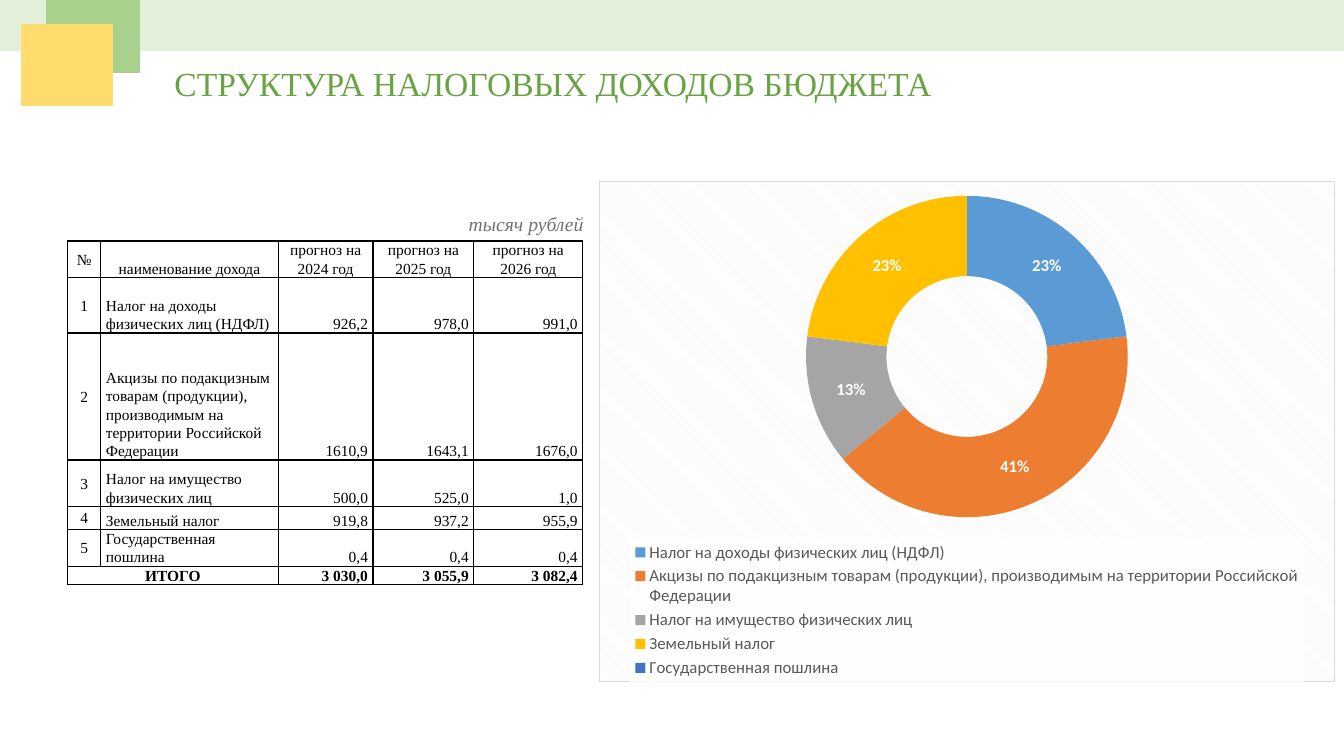
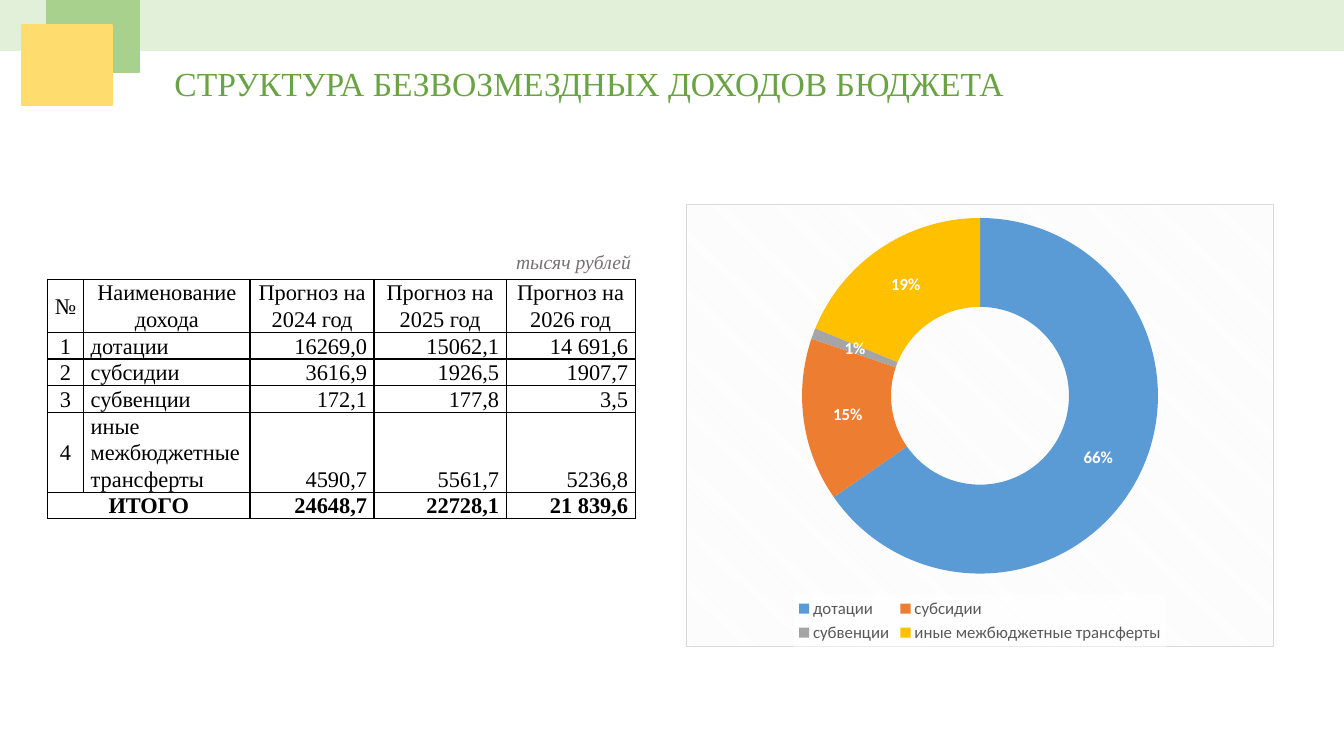
from pptx import Presentation
from pptx.chart.data import CategoryChartData
from pptx.dml.color import RGBColor
from pptx.enum.chart import XL_CHART_TYPE, XL_LEGEND_POSITION
from pptx.enum.shapes import MSO_SHAPE
from pptx.enum.text import MSO_ANCHOR, PP_ALIGN
from pptx.oxml import parse_xml
from pptx.oxml.ns import nsdecls, qn
from pptx.util import Inches, Pt

DOUGHNUT = XL_CHART_TYPE.DOUGHNUT
LEGEND_BOTTOM = XL_LEGEND_POSITION.BOTTOM
RECT = MSO_SHAPE.RECTANGLE
TOP, MIDDLE, BOTTOM = MSO_ANCHOR.TOP, MSO_ANCHOR.MIDDLE, MSO_ANCHOR.BOTTOM
LEFT, CENTER, RIGHT = PP_ALIGN.LEFT, PP_ALIGN.CENTER, PP_ALIGN.RIGHT

SERIF, SANS = "Times New Roman", "Calibri"
COLORS = {
    "title": "6AA343", "band": "E2F0D9", "green": "A9D18E", "yellow": "FFDC6D",
    "black": "000000", "white": "FFFFFF", "unit": "767171", "legend": "595959",
    "hatch": "F2F2F2", "border": "D9D9D9",
}
SLICES = ["5B9BD5", "ED7D31", "A5A5A5", "FFC000", "4472C4"]
WIDTH, HEIGHT = 13.33, 7.5
UNIT = "тысяч рублей"

# Shared decoration: colour, (left, top, width, height)
DECOR = [
    ("band", (0, 0, WIDTH, 0.5)),
    ("green", (0.46, 0, 0.92, 0.72)),
    ("yellow", (0.22, 0.25, 0.89, 0.8)),
]

# Content; "shares" are whole percentages for the chart.
# Row heights are minimums: rows grow to fit their text.
SLIDES = [
    {
        "title": "СТРУКТУРА НАЛОГОВЫХ ДОХОДОВ БЮДЖЕТА",
        "header": ["№", "наименование дохода", "прогноз на 2024 год",
                   "прогноз на 2025 год", "прогноз на 2026 год"],
        "items": [
            ("Налог на доходы физических лиц (НДФЛ)", "926,2", "978,0", "991,0"),
            ("Акцизы по подакцизным товарам (продукции), производимым на "
             "территории Российской Федерации", "1610,9", "1643,1", "1676,0"),
            ("Налог на имущество физических лиц", "500,0", "525,0", "1,0"),
            ("Земельный налог", "919,8", "937,2", "955,9"),
            ("Государственная пошлина", "0,4", "0,4", "0,4"),
        ],
        "total": ("3 030,0", "3 055,9", "3 082,4"),
        "shares": [23, 41, 13, 23, 0],
        "table_at": (0.67, 2.39), "unit_at": (4.55, 2.05),
        "cols": [0.33, 1.76, 0.94, 1, 1.08],
        "rows": [0.36, 0.55, 1.26, 0.46, 0.23, 0.36, 0.18],
        "size": 11, "inset": 0.05, "header_anchor": BOTTOM,
        "chart_box": (5.94, 1.8, 7.3, 4.97),
    },
    {
        "title": "СТРУКТУРА БЕЗВОЗМЕЗДНЫХ ДОХОДОВ БЮДЖЕТА",
        "header": ["№", "Наименование дохода", "Прогноз на 2024 год",
                   "Прогноз на 2025 год", "Прогноз на 2026 год"],
        "items": [
            ("дотации", "16269,0", "15062,1", "14 691,6"),
            ("субсидии", "3616,9", "1926,5", "1907,7"),
            ("субвенции", "172,1", "177,8", "3,5"),
            ("иные межбюджетные трансферты", "4590,7", "5561,7", "5236,8"),
        ],
        "total": ("24648,7", "22728,1", "21 839,6"),
        "shares": [66, 15, 1, 19],
        "table_at": (0.47, 2.77), "unit_at": (5.02, 2.43),
        "cols": [0.36, 1.65, 1.23, 1.31, 1.28],
        "rows": [0.21] * 6,
        "size": 16, "inset": 0.07, "header_anchor": MIDDLE,
        "chart_box": (6.8, 2.02, 5.84, 4.4),
    },
]


def rgb(name):
    return RGBColor.from_string(COLORS[name])


def inches(box):
    return [Inches(v) for v in box]


def style(font, size, color, name=SANS, bold=False, italic=False):
    font.size, font.name, font.bold, font.italic = Pt(size), name, bold, italic
    font.color.rgb = rgb(color)


def write(tf, text, size=14, color="black", align=LEFT, spacing=None, **fmt):
    p = tf.paragraphs[0]
    p.alignment = align
    p.line_spacing = spacing
    r = p.add_run()
    r.text = text
    style(r.font, size, color, SERIF, **fmt)


def add_decor(s):
    for color, box in DECOR:
        sp = s.shapes.add_shape(RECT, *inches(box))
        sp.shadow.inherit = False
        sp.fill.solid()
        sp.fill.fore_color.rgb = sp.line.color.rgb = rgb(color)
        sp.line.width = Pt(1)


def add_title(s, text):
    title = s.shapes.title
    title.left, title.top, title.width, title.height = inches((1.63, 0.57, 10, 0.5))
    tf = title.text_frame
    tf.word_wrap = False
    tf.vertical_anchor = TOP
    write(tf, text, size=24, color="title")


def add_unit(s, at):
    sp = s.shapes.add_textbox(*inches((*at, 1.39, 0.34)))
    sp.text_frame.word_wrap = False
    write(sp.text_frame, UNIT, color="unit", italic=True)


def add_borders(cell):
    tc_pr = cell._tc.get_or_add_tcPr()
    for side in "LRTB":
        tc_pr.append(parse_xml(
            f'<a:ln{side} {nsdecls("a")} w="12700"><a:solidFill>'
            f'<a:srgbClr val="{COLORS["black"]}"/></a:solidFill></a:ln{side}>'))


def add_income_table(s, data):
    body = [(str(i), *item) for i, item in enumerate(data["items"], 1)]
    grid = [data["header"], *body, ("ИТОГО", "", *data["total"])]
    last = len(grid) - 1
    size = (sum(data["cols"]), sum(data["rows"]))
    table = s.shapes.add_table(len(grid), len(data["cols"]),
                               *inches((*data["table_at"], *size))).table
    for col, width in zip(table.columns, data["cols"]):
        col.width = Inches(width)
    for row, height in zip(table.rows, data["rows"]):
        row.height = Inches(height)
    for i, row in enumerate(grid):
        for j, text in enumerate(row):
            cell = table.cell(i, j)
            add_borders(cell)
            cell.fill.background()
            cell.margin_left = cell.margin_right = Inches(data["inset"])
            cell.margin_top = cell.margin_bottom = 0
            cell.vertical_anchor = (MIDDLE if j == 0 else
                                    data["header_anchor"] if i == 0 else BOTTOM)
            align = CENTER if i == 0 or j == 0 else LEFT if j == 1 else RIGHT
            if text:
                write(cell.text_frame, text, size=data["size"], align=align,
                      spacing=1.07, bold=i == last)
    table.cell(last, 0).merge(table.cell(last, 1))


def add_share_chart(s, data):
    cd = CategoryChartData()
    cd.categories = [item[0] for item in data["items"]]
    cd.add_series("2024", data["shares"])
    chart = s.shapes.add_chart(DOUGHNUT, *inches(data["chart_box"]), cd).chart
    chart.has_title = False
    style(chart.font, 10, "black")
    chart.has_legend = True
    legend = chart.legend
    legend.position = LEGEND_BOTTOM
    legend.include_in_layout = False
    style(legend.font, 12, "legend")

    # Slices and labels; the values are already percentages
    plot = chart.plots[0]
    plot.vary_by_categories = True
    for i in range(len(data["shares"])):
        fill = plot.series[0].points[i].format.fill
        fill.solid()
        fill.fore_color.rgb = RGBColor.from_string(SLICES[i])
    plot.has_data_labels = True
    labels = plot.data_labels
    labels.show_percentage, labels.show_value = False, True
    labels.number_format, labels.number_format_is_linked = '0"%"', False
    style(labels.font, 12, "white", bold=True)

    # Hole, hatched background and pale legend panel
    root = chart._chartSpace
    root.find(".//" + qn("c:holeSize")).set("val", "70")
    root.find(qn("c:chart")).addnext(parse_xml(
        f'<c:spPr {nsdecls("c", "a")}><a:pattFill prst="dkDnDiag">'
        f'<a:fgClr><a:srgbClr val="{COLORS["hatch"]}"/></a:fgClr>'
        f'<a:bgClr><a:srgbClr val="{COLORS["white"]}"/></a:bgClr></a:pattFill>'
        f'<a:ln w="9525"><a:solidFill><a:srgbClr val="{COLORS["border"]}"/>'
        '</a:solidFill></a:ln></c:spPr>'))
    root.find(".//" + qn("c:legend")).find(qn("c:overlay")).addnext(parse_xml(
        f'<c:spPr {nsdecls("c", "a")}><a:solidFill>'
        f'<a:srgbClr val="{COLORS["white"]}"><a:alpha val="78000"/></a:srgbClr>'
        '</a:solidFill></c:spPr>'))


def main():
    prs = Presentation()
    prs.slide_width, prs.slide_height = Inches(WIDTH), Inches(HEIGHT)
    for data in SLIDES:
        s = prs.slides.add_slide(prs.slide_layouts[5])
        add_title(s, data["title"])
        add_decor(s)
        add_income_table(s, data)
        add_unit(s, data["unit_at"])
        add_share_chart(s, data)
    prs.save("out.pptx")


if __name__ == "__main__":
    main()
